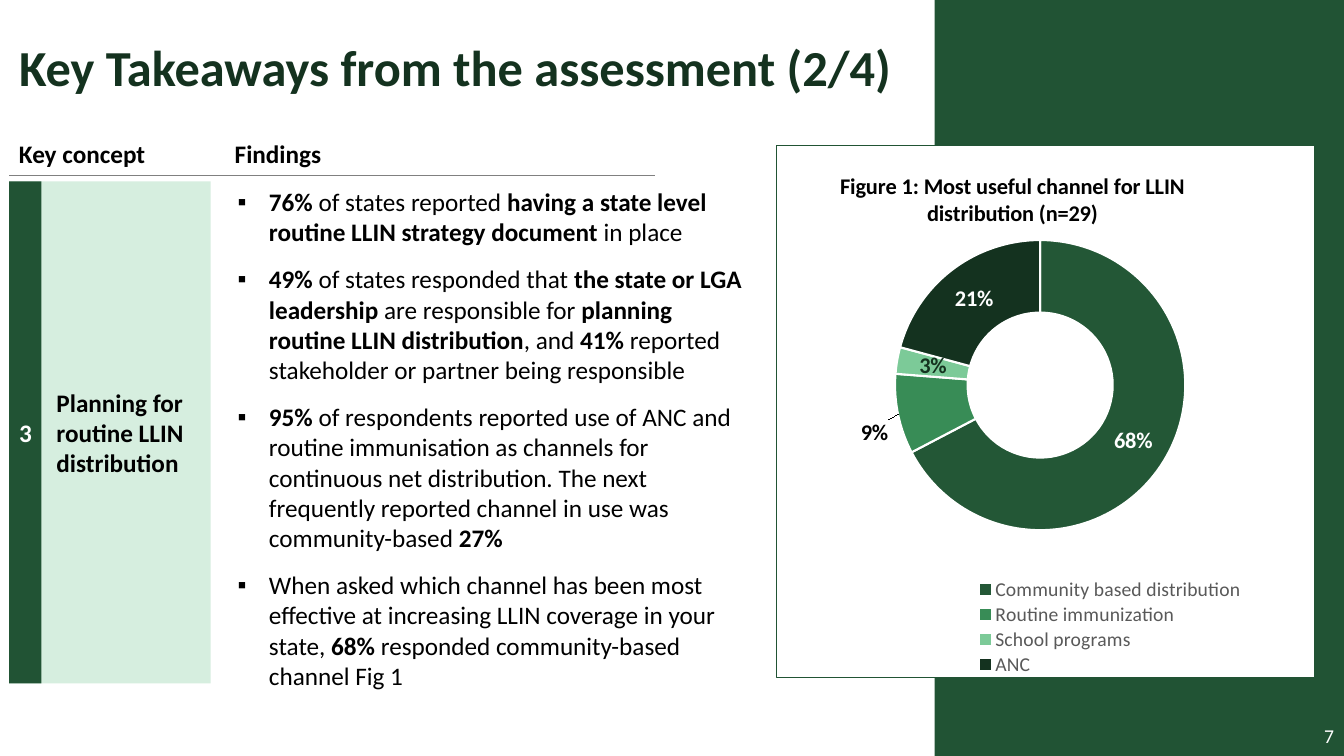
from dataclasses import dataclass
from lxml import etree
from pptx import Presentation
from pptx.chart.data import CategoryChartData
from pptx.dml.color import RGBColor
from pptx.enum.chart import XL_CHART_TYPE, XL_LEGEND_POSITION
from pptx.enum.shapes import MSO_CONNECTOR, MSO_SHAPE
from pptx.enum.text import MSO_ANCHOR, PP_ALIGN
from pptx.oxml import parse_xml
from pptx.oxml.ns import qn
from pptx.util import Inches, Pt

DOUGHNUT = XL_CHART_TYPE.DOUGHNUT
LEGEND_BOTTOM = XL_LEGEND_POSITION.BOTTOM
STRAIGHT = MSO_CONNECTOR.STRAIGHT
RECTANGLE = MSO_SHAPE.RECTANGLE
TOP, MIDDLE, BOTTOM = MSO_ANCHOR.TOP, MSO_ANCHOR.MIDDLE, MSO_ANCHOR.BOTTOM
LEFT, RIGHT = PP_ALIGN.LEFT, PP_ALIGN.RIGHT
CHART_NS = "http://schemas.openxmlformats.org/drawingml/2006/chart"
DRAWING_NS = "http://schemas.openxmlformats.org/drawingml/2006/main"


@dataclass(frozen=True)
class Theme:
    """Colours, font and type sizes of the slide."""
    font: str = "Calibri"
    green: str = "215334"
    dark: str = "14321F"
    pale: str = "D6EEDF"
    white: str = "FFFFFF"
    black: str = "000000"
    rule: str = "808080"
    legend: str = "595959"
    slices: tuple = ("235736", "388C56", "7CCA98", "14321F")
    title: int = 36
    body: int = 18
    figure: int = 16
    small: int = 14


THEME = Theme()
WIDTH, HEIGHT = 13.33, 7.5
MARGIN = 0.09
BODY_TOP = 1.8
FINDINGS = [
    [("76% ", True), ("of states reported ", False),
     ("having a state level routine LLIN strategy document ", True), ("in place", False)],
    [("49%", True), (" of states responded that ", False),
     ("the state or LGA leadership ", True), ("are responsible for ", False),
     ("planning routine LLIN distribution", True), (", and ", False), ("41%", True),
     (" reported stakeholder or partner being responsible", False)],
    [("95%", True), (" of respondents reported use of ANC and routine immunisation as channels "
                     "for continuous net distribution. The next frequently reported channel "
                     "in use was community-based ", False), ("27%", True)],
    [("When asked which channel has been most effective at increasing LLIN coverage "
      "in your state, ", False), ("68%", True),
     (" responded community-based channel Fig 1", False)],
]
CHANNELS = {"Community based distribution": 0.68, "Routine immunization": 0.09,
            "School programs": 0.03, "ANC": 0.21}


def style_font(font, size, color, bold=False):
    """Set typeface, size, colour and weight."""
    font.name, font.size, font.bold = THEME.font, Pt(size), bold
    font.color.rgb = RGBColor.from_string(color)


def write(shape, paragraphs, size, color, anchor=TOP, align=LEFT, space=0):
    """Fill a shape with paragraphs given as lists of (text, bold) runs."""
    frame = shape.text_frame
    frame.word_wrap, frame.vertical_anchor = True, anchor
    for index, runs in enumerate(paragraphs):
        paragraph = frame.add_paragraph() if index else frame.paragraphs[0]
        paragraph.alignment = align
        paragraph.space_before = paragraph.space_after = Pt(space)
        for text, bold in runs:
            run = paragraph.add_run()
            run.text = text
            style_font(run.font, size, color, bold)
    return frame


def add_text(slide, box, paragraphs, size, color, **options):
    """Add a wrapped text box."""
    shape = slide.shapes.add_textbox(*map(Inches, box))
    return write(shape, paragraphs, size, color, **options)


def add_block(slide, box, color):
    """Add a plain filled rectangle."""
    shape = slide.shapes.add_shape(RECTANGLE, *map(Inches, box))
    shape.shadow.inherit = False
    shape.fill.solid()
    shape.fill.fore_color.rgb = RGBColor.from_string(color)
    shape.line.fill.background()
    return shape


def add_heading(slide, box):
    """Add the slide title, resting on the bottom of its box."""
    frame = add_text(slide, box, [[("Key Takeaways from the assessment (2/4)", True)]],
                     THEME.title, THEME.dark, anchor=BOTTOM)
    frame.paragraphs[0].line_spacing = 0.9


def add_column_heads(slide, box):
    """Add the two column heads and the rule below them."""
    left, top, width, height = box
    for text, offset, span in (("Key concept", 0, 2.17), ("Findings", 2.14, 4.27)):
        add_text(slide, (left + offset, top, span, height), [[(text, True)]],
                 THEME.body, THEME.black, space=3)
    rule_y = Inches(top + height + 0.02)
    rule = slide.shapes.add_connector(STRAIGHT, Inches(left), rule_y,
                                      Inches(left + width), rule_y)
    rule.line.color.rgb = RGBColor.from_string(THEME.rule)
    rule.line.width = Pt(0.75)
    etree.SubElement(rule.element.spPr, qn("a:effectLst"))


def add_concept(slide, box):
    """Add the concept card with its numbered strip."""
    left, top, width, height = box
    card = add_block(slide, box, THEME.pale)
    frame = write(card, [[("Planning for routine LLIN distribution", True)]],
                  THEME.body, THEME.black, anchor=MIDDLE)
    frame.margin_left, frame.margin_right = Inches(0.47), Inches(0.08)
    strip = add_block(slide, (left, top, width * 0.16, height), THEME.green)
    write(strip, [[("3", True)]], THEME.body, THEME.white, anchor=MIDDLE, space=3)


def add_findings(slide, box):
    """Add the bulleted findings."""
    frame = add_text(slide, box, FINDINGS, THEME.body, THEME.black, space=6)
    for paragraph in frame.paragraphs:
        properties = paragraph._p.get_or_add_pPr()
        properties.set("marL", str(Inches(0.31)))
        properties.set("indent", str(-Inches(0.31)))
        etree.SubElement(properties, qn("a:buFont"), typeface="Arial")
        etree.SubElement(properties, qn("a:buChar"), char="▪")


def place(element, index, x, y, size=None, edge=True, inner=False):
    """Give a chart part a manual layout in shares of the chart."""
    for layout in element.findall(qn("c:layout")):
        element.remove(layout)
    layout = etree.Element(qn("c:layout"))
    manual = etree.SubElement(layout, qn("c:manualLayout"))
    settings = [("layoutTarget", "inner")] if inner else []
    settings += [("xMode", "edge"), ("yMode", "edge")] if edge else []
    settings += [("x", x), ("y", y)]
    settings += zip("wh", size) if size else []
    for name, value in settings:
        etree.SubElement(manual, qn("c:" + name), val=str(value))
    element.insert(index, layout)


def add_channel_chart(slide, box):
    """Add the framed doughnut chart of distribution channels."""
    data = CategoryChartData(number_format="0%")
    data.categories = list(CHANNELS)
    data.add_series("Series 1", list(CHANNELS.values()))
    chart = slide.shapes.add_chart(DOUGHNUT, *map(Inches, box), data).chart
    style_font(chart.font, THEME.small, THEME.black)
    chart.element.find(qn("c:chart")).addnext(parse_xml(
        f'<c:spPr xmlns:c="{CHART_NS}" xmlns:a="{DRAWING_NS}">'
        f'<a:solidFill><a:srgbClr val="{THEME.white}"/></a:solidFill><a:ln w="{Pt(0.75)}">'
        f'<a:solidFill><a:srgbClr val="{THEME.green}"/></a:solidFill></a:ln></c:spPr>'))

    chart.has_title = True
    run = chart.chart_title.text_frame.paragraphs[0].add_run()
    run.text = "Figure 1: Most useful channel for LLIN distribution (n=29)"
    style_font(run.font, THEME.figure, THEME.black, True)
    place(chart.chart_title._element, 1, 0.11, 0.04)

    chart.has_legend = True
    chart.legend.position = LEGEND_BOTTOM
    chart.legend.include_in_layout = False
    style_font(chart.legend.font, THEME.small, THEME.legend)
    place(chart.legend._element, 1, 0.37, 0.81, (0.5, 0.19))

    plot = chart.plots[0]
    plot.vary_by_categories = True
    place(chart.element.find(".//" + qn("c:plotArea")), 0, 0.22, 0.1, (0.54, 0.7), inner=True)
    series = plot.series[0]
    labels = series.data_labels
    labels.show_value = True
    labels.number_format, labels.number_format_is_linked = "0%", False
    style_font(labels.font, THEME.figure, THEME.white, True)
    for index, color in enumerate(THEME.slices):
        look = series.points[index].format
        look.fill.solid()
        look.fill.fore_color.rgb = RGBColor.from_string(color)
        look.line.color.rgb = RGBColor.from_string(THEME.white)
        look.line.width = Pt(1.5)
    for index, color in ((1, THEME.black), (2, THEME.dark)):
        style_font(series.points[index].data_label.font, THEME.figure, color, True)
    place(labels._element.find(qn("c:dLbl")), 1, -0.11, 0.05, edge=False)


def build_slide(presentation):
    """Lay out the takeaways slide."""
    slide = presentation.slides.add_slide(presentation.slide_layouts[6])
    panel_left = 9.27
    add_block(slide, (panel_left, 0, WIDTH - panel_left, HEIGHT), THEME.green)
    add_channel_chart(slide, (7.7, 1.44, 5.34, 5.29))
    add_column_heads(slide, (MARGIN, 1.32, 6.41, 0.4))
    add_findings(slide, (2.26, BODY_TOP, 5.27, 5.15))
    add_concept(slide, (MARGIN, BODY_TOP, 2, 4.98))
    add_heading(slide, (MARGIN, 0, panel_left - MARGIN, 1.02))
    add_text(slide, (WIDTH - 3, 7.1, 3, 0.4), [[("7", False)]], THEME.small, THEME.white,
             anchor=MIDDLE, align=RIGHT)


def main():
    """Build and save the presentation."""
    presentation = Presentation()
    presentation.slide_width, presentation.slide_height = Inches(WIDTH), Inches(HEIGHT)
    build_slide(presentation)
    presentation.save("out.pptx")


if __name__ == "__main__":
    main()
